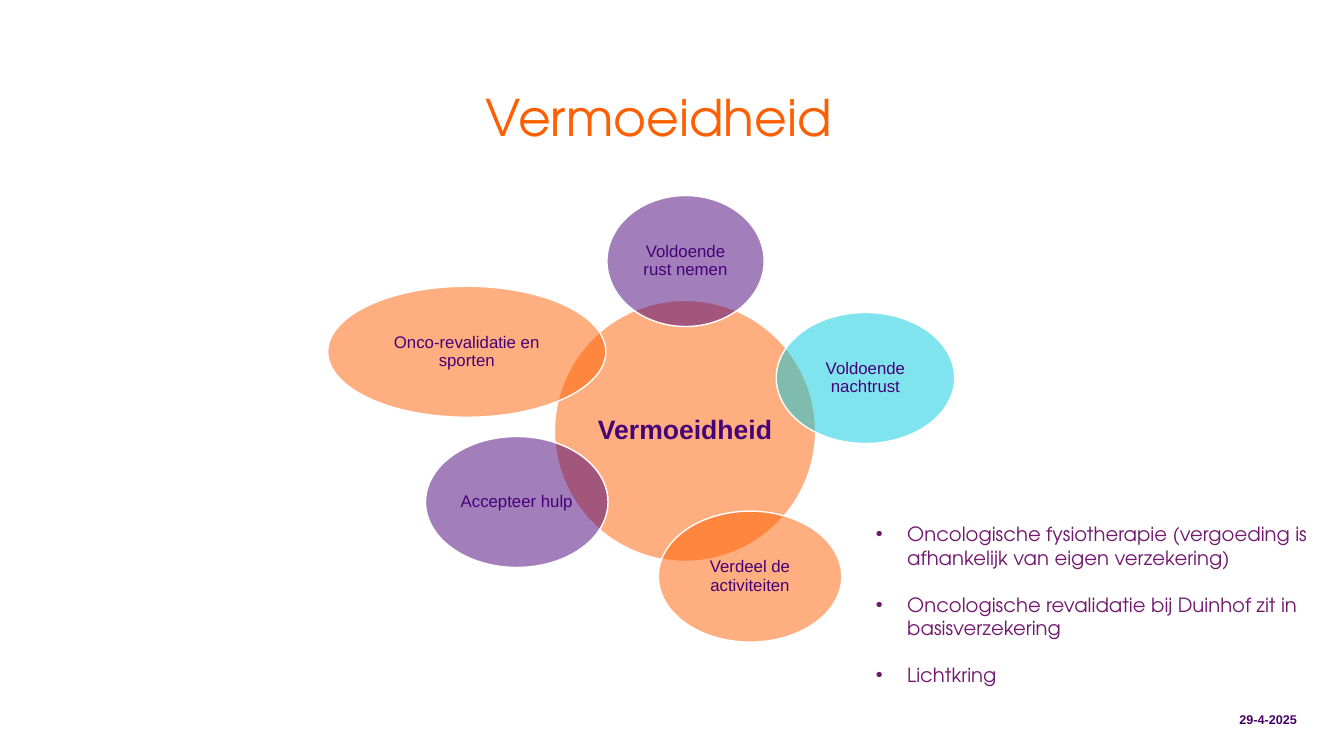
from dataclasses import dataclass

from lxml import etree
from pptx import Presentation
from pptx import util as u
from pptx.dml.color import RGBColor
from pptx.enum import shapes, text
from pptx.oxml import ns


@dataclass(frozen=True)
class Theme:
    orange: str = "FF5F00"
    purple: str = "460078"
    cyan: str = "00CBDE"
    plum: str = "71186E"
    dark: str = "460064"
    white: str = "FFFFFF"
    head: str = "TeX Gyre Adventor"
    body: str = "Arial"
    title: int = 36
    core: int = 19
    list: int = 14
    label: int = 12
    date: int = 9


class Slide:
    """Places elements on a grid of 100 columns by 100 rows."""

    def __init__(self, deck, theme):
        self.theme = theme
        self.col = deck.slide_width / 100
        self.row = deck.slide_height / 100
        self.items = deck.slides.add_slide(deck.slide_layouts[6]).shapes

    def place(self, left, top, width, height):
        return [u.Emu(round(n * unit)) for n, unit in zip(
            (left, top, width, height), (self.col, self.row) * 2)]

    def add_words(self, para, words, size, color, font, bold=False):
        run = para.add_run()
        run.text = words
        run.font.size = u.Pt(size)
        run.font.name = font
        run.font.bold = bold
        run.font.color.rgb = RGBColor.from_string(color)

    def frame(self, area):
        frame = self.items.add_textbox(*self.place(*area)).text_frame
        frame.word_wrap = True
        return frame

    def line(self, area, words, size, color, font, align,
             bold=False, space=1.0, anchor=text.MSO_ANCHOR.TOP):
        frame = self.frame(area)
        frame.vertical_anchor = anchor
        para = frame.paragraphs[0]
        para.alignment = align
        para.line_spacing = space
        self.add_words(para, words, size, color, font, bold)

    def bubble(self, mid, size, words, fill, points, bold=False, inset=0.02):
        (x, y), (width, height) = mid, size
        oval = self.items.add_shape(
            shapes.MSO_SHAPE.OVAL,
            *self.place(x - width / 2, y - height / 2, width, height))
        oval.shadow.inherit = False
        oval.fill.solid()
        oval.fill.fore_color.rgb = RGBColor.from_string(fill)
        # Half transparent, so that overlaps show
        tint = oval._element.spPr.find(
            ns.qn("a:solidFill") + "/" + ns.qn("a:srgbClr"))
        etree.SubElement(tint, ns.qn("a:alpha"), val="50000")
        oval.line.color.rgb = RGBColor.from_string(self.theme.white)
        oval.line.width = u.Pt(1)
        frame = oval.text_frame
        frame.word_wrap = True
        frame.vertical_anchor = text.MSO_ANCHOR.MIDDLE
        frame.margin_left = frame.margin_right = u.Inches(inset)
        frame.margin_top = frame.margin_bottom = u.Inches(inset)
        para = frame.paragraphs[0]
        para.alignment = text.PP_ALIGN.CENTER
        para.line_spacing = 0.9
        self.add_words(para, words, points, self.theme.purple,
                       self.theme.body, bold)

    def bullets(self, area, lines, size, color, font, gap):
        frame = self.frame(area)
        indent = u.Inches(0.31)
        for i, words in enumerate(lines):
            para = frame.add_paragraph() if i else frame.paragraphs[0]
            props = para._p.get_or_add_pPr()
            props.set("marL", str(indent))
            props.set("indent", str(-indent))
            etree.SubElement(props, ns.qn("a:buFont"), typeface="Arial")
            etree.SubElement(props, ns.qn("a:buChar"), char="•")
            if i:
                para.space_before = u.Pt(gap)
            self.add_words(para, words, size, color, font)


def main():
    deck = Presentation()
    deck.slide_width, deck.slide_height = u.Inches(13.33), u.Inches(7.5)
    theme = Theme()
    slide = Slide(deck, theme)

    # Title and date
    slide.line((9.3, 11.6, 79.44, 6.53), "Vermoeidheid", theme.title,
               theme.orange, theme.head, text.PP_ALIGN.CENTER, space=0.9)
    slide.line((87.7, 92.53, 9.53, 5.33), "29-4-2025", theme.date,
               theme.dark, theme.body, text.PP_ALIGN.RIGHT, bold=True,
               anchor=text.MSO_ANCHOR.MIDDLE)

    # Core bubble with its ring of advice
    slide.bubble((50.97, 57), (19.43, 34.53), "Vermoeidheid",
                 theme.orange, theme.core, bold=True, inset=0.03)
    ring = [
        ((51.01, 34.53), 11.7, "Voldoende rust nemen", theme.purple),
        ((64.4, 50), 13.28, "Voldoende nachtrust", theme.cyan),
        ((55.81, 76.27), 13.65, "Verdeel de activiteiten", theme.orange),
        ((38.45, 66.4), 13.58, "Accepteer hulp", theme.purple),
        ((34.73, 46.53), 20.7, "Onco-revalidatie en sporten", theme.orange),
    ]
    for mid, width, words, fill in ring:
        slide.bubble(mid, (width, 17.33), words, fill, theme.label)

    # Where to find help
    slide.bullets((64.44, 68.4, 33.91, 26.53), [
        "Oncologische fysiotherapie (vergoeding is afhankelijk van eigen "
        "verzekering)",
        "Oncologische revalidatie bij Duinhof zit in basisverzekering",
        "Lichtkring",
    ], theme.list, theme.plum, theme.head, gap=16.8)

    deck.save("out.pptx")


if __name__ == "__main__":
    main()
